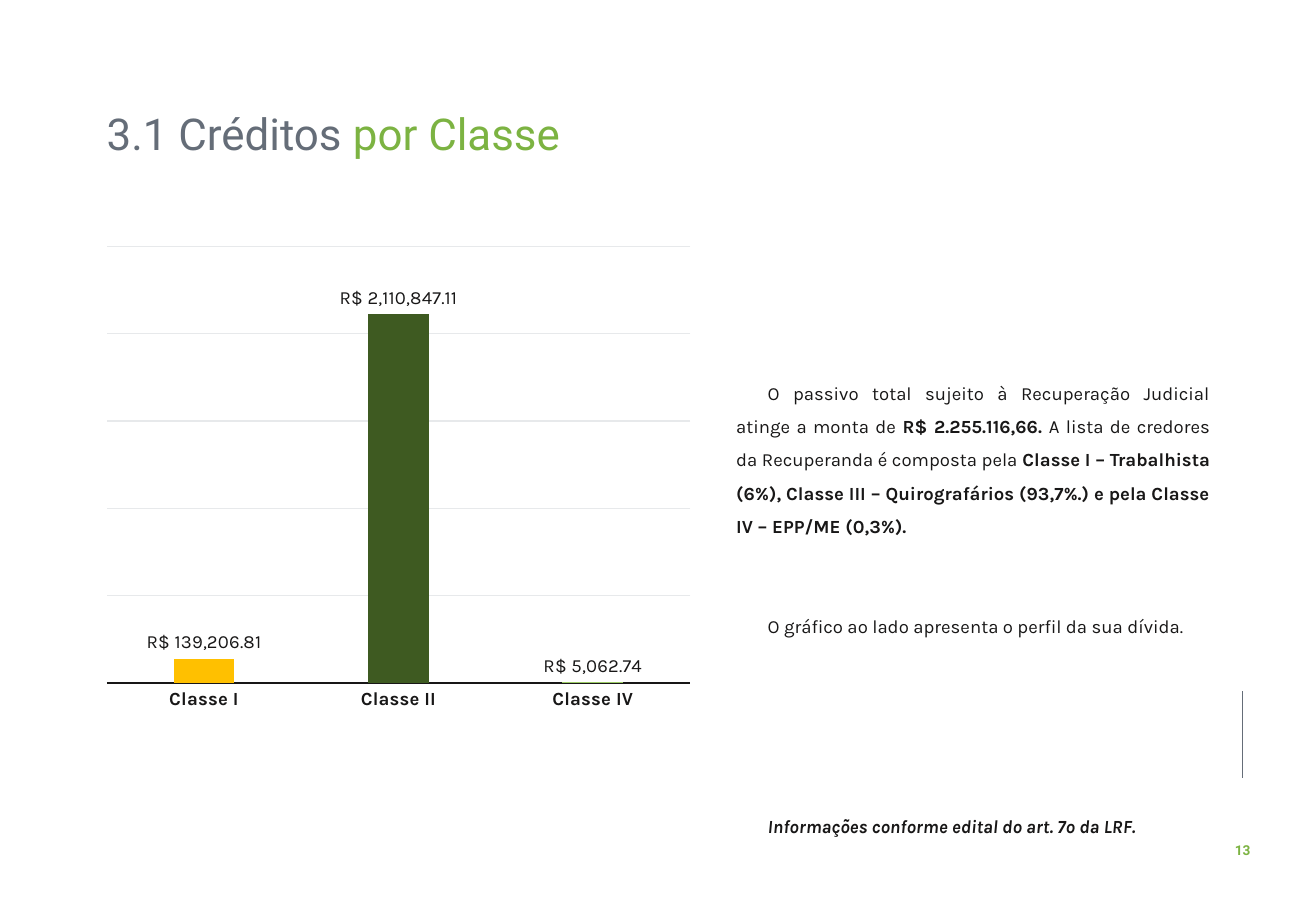
from lxml import etree
from pptx import Presentation
from pptx.chart.data import CategoryChartData
from pptx.dml.color import RGBColor
from pptx.enum.chart import XL_CHART_TYPE, XL_LABEL_POSITION, XL_TICK_MARK
from pptx.enum.shapes import MSO_CONNECTOR
from pptx.enum.text import MSO_ANCHOR, PP_ALIGN
from pptx.oxml.ns import qn
from pptx.util import Cm, Pt

COLUMN = XL_CHART_TYPE.COLUMN_CLUSTERED
OUTSIDE_END = XL_LABEL_POSITION.OUTSIDE_END
NO_TICK = XL_TICK_MARK.NONE
STRAIGHT = MSO_CONNECTOR.STRAIGHT
TOP, MIDDLE = MSO_ANCHOR.TOP, MSO_ANCHOR.MIDDLE
CENTER, JUSTIFY = PP_ALIGN.CENTER, PP_ALIGN.JUSTIFY

SLATE = RGBColor(0x65, 0x6D, 0x78)
GREEN = RGBColor(0x7C, 0xB3, 0x42)
INK = RGBColor(0x18, 0x17, 0x17)
GRID = RGBColor(0xE7, 0xE9, 0xEB)
LIGHT_GREEN = RGBColor(0x9C, 0xCC, 0x65)
YELLOW = RGBColor(0xFF, 0xC0, 0x00)
DARK_GREEN = RGBColor(0x3E, 0x5A, 0x21)

CLASSES = {"Classe I": 139206.81, "Classe II": 2110847.11, "Classe IV": 5062.74}
POINT_COLORS = [YELLOW, DARK_GREEN]

BODY = [
    (0, [("O passivo total sujeito à Recuperação Judicial atinge a monta de ", False, False),
         ("R$ 2.255.116,66. ", True, False),
         ("A lista de credores da Recuperanda é composta pela ", False, False),
         ("Classe I – Trabalhista (6%), Classe III – Quirografários (93,7%.) "
          "e pela Classe IV – EPP/ME (0,3%).", True, False)]),
    (39.5, [("O gráfico ao lado apresenta o perfil da sua dívida.", False, False)]),
    (98.75, [("Informações conforme edital do art. 7º da LRF.", True, True)]),
]


def style_font(font, name, size, color, bold=False, italic=False):
    font.name = name
    font.size = Pt(size)
    font.color.rgb = color
    font.bold = bold
    font.italic = italic


def add_run(p, text, *style):
    r = p.add_run()
    r.text = text
    style_font(r.font, *style)


def add_text_frame(s, box, anchor, wrap=True):
    tf = s.shapes.add_textbox(*map(Cm, box)).text_frame
    tf.word_wrap = wrap
    tf.vertical_anchor = anchor
    return tf


def add_title(s, box):
    p = add_text_frame(s, box, MIDDLE).paragraphs[0]
    p.line_spacing = 0.9
    add_run(p, "3.1 Créditos ", "Roboto", 26, SLATE)
    add_run(p, "por Classe", "Roboto", 26, GREEN)


def add_credit_chart(s, box):
    data = CategoryChartData()
    data.categories = list(CLASSES)
    data.add_series("Créditos", list(CLASSES.values()))
    chart = s.shapes.add_chart(COLUMN, *map(Cm, box), data).chart
    chart.has_legend = False
    chart.has_title = False
    style_font(chart.font, "Karla", 11, SLATE)

    plot = chart.plots[0]
    plot.gap_width = 219
    plot.overlap = -27
    plot.vary_by_categories = False
    series = plot.series[0]
    series.format.fill.solid()
    series.format.fill.fore_color.rgb = LIGHT_GREEN
    for i, color in enumerate(POINT_COLORS):
        fill = series.points[i].format.fill
        fill.solid()
        fill.fore_color.rgb = color

    labels = series.data_labels
    labels.show_value = True
    labels.position = OUTSIDE_END
    labels.number_format = '"R$" #,##0.00'
    labels.number_format_is_linked = False
    style_font(labels.font, "Karla", 11, INK)

    classes = chart.category_axis
    classes.major_tick_mark = NO_TICK
    classes.format.line.color.rgb = INK
    classes.format.line.width = Pt(0.75)
    style_font(classes.tick_labels.font, "Karla", 11, INK, True)

    values = chart.value_axis
    values.visible = False
    values.minimum_scale = 0
    values.maximum_scale = 2500000
    values.major_unit = 500000
    values.has_major_gridlines = True
    values.major_gridlines.format.line.color.rgb = GRID
    values.major_gridlines.format.line.width = Pt(0.75)


def add_body(s, box):
    tf = add_text_frame(s, box, TOP)
    for i, (space, runs) in enumerate(BODY):
        p = tf.add_paragraph() if i else tf.paragraphs[0]
        p.alignment = JUSTIFY
        p.line_spacing = 1.5
        if space:
            p.space_before = Pt(space)
        p._p.get_or_add_pPr().set("indent", str(Cm(0.66)))
        for text, bold, italic in runs:
            add_run(p, text, "Karla", 11, INK, bold, italic)


def add_page_mark(s, box):
    left, top, width, height = box
    number_height = 0.61
    x = Cm(left + width / 2)
    rule = s.shapes.add_connector(STRAIGHT, x, Cm(top), x, Cm(top + 1.81))
    rule.line.color.rgb = SLATE
    rule.line.width = Pt(0.5)
    etree.SubElement(rule._element.spPr, qn("a:effectLst"))

    number_box = (left, top + height - number_height, width, number_height)
    p = add_text_frame(s, number_box, TOP, False).paragraphs[0]
    p.alignment = CENTER
    add_run(p, "13", "Roboto", 8.1, GREEN, True)


def main():
    prs = Presentation()
    prs.slide_width = Cm(27.51)
    prs.slide_height = Cm(19.05)
    s = prs.slides.add_slide(prs.slide_layouts[6])
    add_title(s, (1.98, 2.18, 20.78, 1.35))
    add_credit_chart(s, (1.98, 4.95, 12.7, 10.11))
    add_body(s, (15.14, 7.62, 10.41, 9.35))
    add_page_mark(s, (25.55, 14.45, 0.86, 3.64))
    prs.save("out.pptx")


if __name__ == "__main__":
    main()
